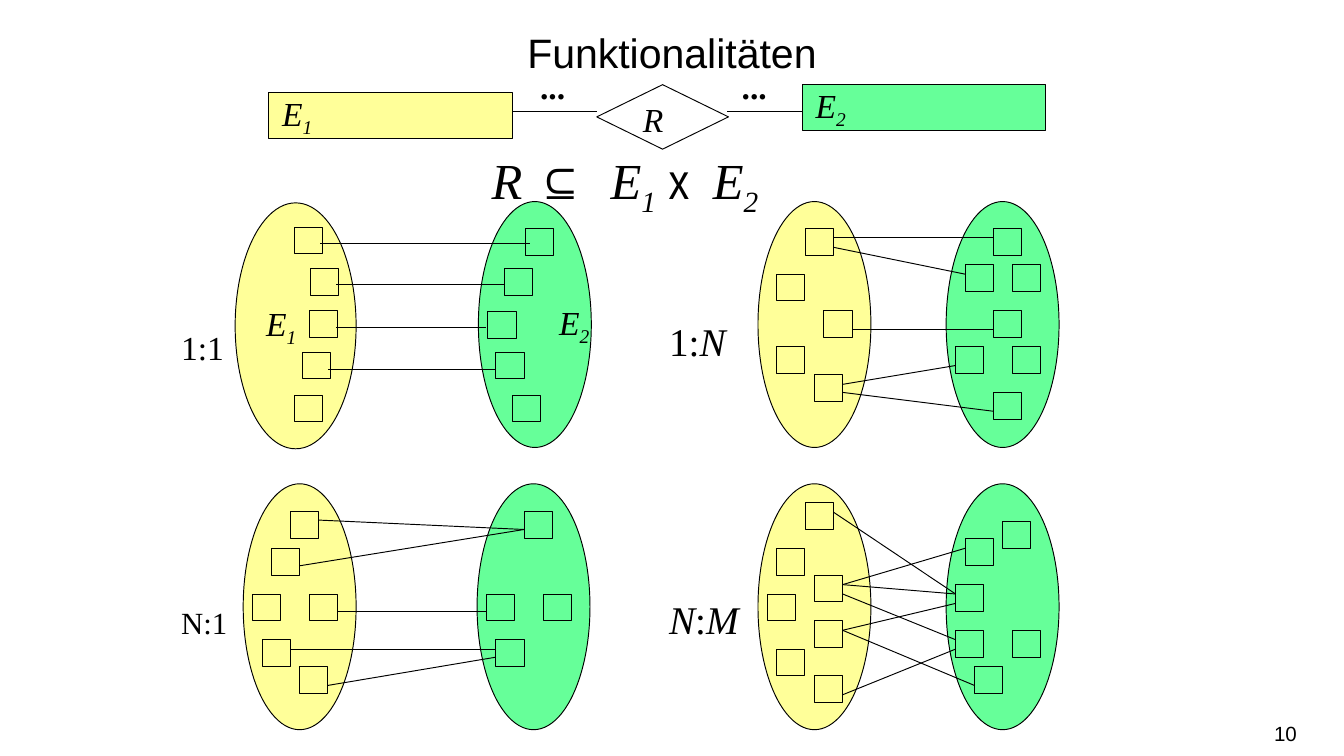
from pptx import Presentation
from pptx.util import Cm, Pt
from pptx.dml.color import RGBColor
from pptx.enum.shapes import MSO_SHAPE as Form, MSO_CONNECTOR as Link
from pptx.enum.text import PP_ALIGN as Align, MSO_ANCHOR as Anchor
from lxml import etree

BLACK = RGBColor(0x00, 0x00, 0x00)
YELLOW = RGBColor(0xFF, 0xFF, 0x99)
GREEN = RGBColor(0x66, 0xFF, 0x99)
INCH = 2.54
NS = "http://schemas.openxmlformats.org/drawingml/2006/main"
SERIF = "Times New Roman"

deck = Presentation()
deck.slide_width = Cm(25.4)
deck.slide_height = deck.slide_width * 9 // 16
slide = deck.slides.add_slide(deck.slide_layouts[5])
shapes = slide.shapes


def draw(form, at, fill=None):
    shape = shapes.add_shape(form, *[Cm(v * INCH) for v in at])
    shape.shadow.inherit = False
    if fill is None:
        shape.fill.background()
    else:
        shape.fill.solid()
        shape.fill.fore_color.rgb = fill
    shape.line.color.rgb = BLACK
    shape.line.width = Pt(0.5)
    return shape


def write(shape, size, runs, wrap=True, anchor=Anchor.TOP, align=Align.LEFT):
    frame = shape.text_frame
    frame.word_wrap = wrap
    frame.vertical_anchor = anchor
    par = frame.paragraphs[0]
    par.alignment = align
    for text, style in runs:
        run = par.add_run()
        run.text = text
        look = {"size": Pt(size), "name": SERIF, "bold": False, "italic": False}
        look.update({k: v for k, v in style.items() if k not in ("baseline", "spc")})
        for key, value in look.items():
            setattr(run.font, key, value)
        run.font.color.rgb = BLACK
        for key in ("baseline", "spc"):
            if key in style:
                run.font._rPr.set(key, style[key])
    return par


PLAIN = {}
BOLD = {"bold": True}
ITAL = {"italic": True}
SUB = {"italic": True, "baseline": "-25000"}
SANS = {"name": "Arial"}
SLIM = {"name": "Arial Narrow"}
WIDE = {"italic": True, "spc": "675"}
SET1 = [("E", ITAL), ("1", SUB)]
SET2 = [("E", ITAL), ("2", SUB)]

title = shapes.title
title.left, title.top, title.width, title.height = [
    Cm(v * INCH) for v in (1.25, 0.06, 7.5, 0.44)]
par = write(title, 22, [("Funktionalitäten", SANS)], align=Align.CENTER)
par.line_spacing = 1.25

for form, at, fill, runs in [
    (Form.RECTANGLE, (2, 0.69, 1.81, 0.34), YELLOW, SET1),
    (Form.RECTANGLE, (5.97, 0.63, 1.81, 0.34), GREEN, SET2),
    (Form.DIAMOND, (4.44, 0.63, 0.98, 0.48), None, [("R", ITAL)]),
]:
    par = write(draw(form, at, fill), 18, runs, False, Anchor.MIDDLE)
    if form == Form.DIAMOND:
        par.line_spacing = 1.1

labels = [
    ((3.92, 0.44, 0.5, 0.4), 18, [("...", BOLD)]),
    ((5.42, 0.44, 0.5, 0.4), 18, [("...", BOLD)]),
    ((3.56, 1.06, 2.81, 0.56), 27, [
        ("R ⊆", ITAL), (" ", WIDE), ("E", ITAL), ("1", SUB), (" ", ITAL),
        ("x", SLIM), (" ", {"name": "Arial Narrow", "spc": "650"}),
        ("E", ITAL), ("2", SUB)]),
    ((1.25, 2.38, 0.56, 0.4), 18, [("1:1", PLAIN)]),
    ((4.88, 2.31, 0.81, 0.45), 21, [("1:", PLAIN), ("N", ITAL)]),
    ((1.25, 4.44, 0.56, 0.38), 16.5, [("N:1", PLAIN)]),
    ((4.88, 4.38, 0.81, 0.45), 21, [("N", ITAL), (":", PLAIN), ("M", ITAL)]),
]
for at, size, runs in labels:
    write(shapes.add_textbox(*[Cm(v * INCH) for v in at]), size, runs)

ovals = [
    ((1.75, 1.51, 0.9, 1.83), YELLOW, None, SET1, 0,
     [(2.19, 1.69), (2.31, 2), (2.3, 2.31), (2.25, 2.62), (2.19, 2.94)]),
    ((3.56, 1.5, 0.84, 1.83), GREEN, None, SET2, 0.38,
     [(3.91, 1.7), (3.75, 2), (3.63, 2.32), (3.69, 2.62), (3.81, 2.94)]),
    ((5.64, 1.5, 0.84, 1.83), YELLOW, None, [], 0,
     [(5.99, 1.7), (5.78, 2.04), (6.13, 2.31), (5.78, 2.58), (6.06, 2.79)]),
    ((7.04, 1.5, 0.84, 1.83), GREEN, None, [], 0,
     [(7.39, 1.7), (7.18, 1.97), (7.53, 1.97), (7.39, 2.31),
      (7.11, 2.58), (7.53, 2.58), (7.39, 2.92)]),
    ((1.81, 3.6, 0.84, 1.83), YELLOW, YELLOW, [], 0,
     [(2.16, 3.81), (2.02, 4.08), (1.88, 4.42), (2.3, 4.42),
      (1.95, 4.76), (2.23, 4.96)]),
    ((3.55, 3.6, 0.84, 1.83), GREEN, None, [], 0,
     [(3.9, 3.81), (3.62, 4.42), (4.04, 4.42), (3.69, 4.76)]),
    ((5.64, 3.6, 0.84, 1.83), YELLOW, None, [], 0,
     [(5.99, 3.74), (5.78, 4.08), (6.06, 4.28), (5.71, 4.42),
      (6.06, 4.62), (5.78, 4.83), (6.06, 5.03)]),
    ((7.04, 3.6, 0.84, 1.83), GREEN, None, [], 0,
     [(7.46, 3.88), (7.18, 4.01), (7.11, 4.35), (7.11, 4.69),
      (7.53, 4.69), (7.25, 4.96)]),
]
for at, fill, inner, runs, indent, spots in ovals:
    oval = draw(Form.OVAL, at, fill)
    if runs:
        par = write(oval, 18, runs, False, Anchor.MIDDLE)
        par._p.get_or_add_pPr().set("marL", str(Cm(indent * INCH)))
    for x, y in spots:
        draw(Form.RECTANGLE, (x, y, 0.21, 0.2), inner)

lines = [
    (5.41, 0.83, 5.97, 0.83), (4.44, 0.83, 3.81, 0.83),
    (3.94, 1.81, 2.38, 1.81), (2.5, 2.12, 3.75, 2.12),
    (2.5, 2.44, 3.62, 2.44), (2.44, 2.75, 3.69, 2.75),
    (6.2, 1.77, 7.39, 1.77), (6.2, 1.84, 7.18, 2.04),
    (6.34, 2.45, 7.39, 2.45), (6.27, 2.86, 7.11, 2.72),
    (6.27, 2.92, 7.39, 3.06),
    (2.37, 3.87, 3.9, 3.94), (3.9, 3.94, 2.23, 4.21),
    (2.51, 4.55, 3.62, 4.55), (2.16, 4.83, 3.69, 4.83),
    (2.44, 5.1, 3.69, 4.89),
    (6.2, 3.81, 7.11, 4.42), (7.18, 4.08, 6.27, 4.35),
    (6.27, 4.35, 7.11, 4.42), (6.27, 4.42, 7.11, 4.76),
    (7.11, 4.49, 6.27, 4.69), (6.27, 4.69, 7.25, 5.1),
    (6.27, 5.17, 7.11, 4.83),
]
for ends in lines:
    line = shapes.add_connector(Link.STRAIGHT, *[Cm(v * INCH) for v in ends])
    line.line.color.rgb = BLACK
    line.line.width = Pt(0.5)
    etree.SubElement(line._element.spPr, "{%s}effectLst" % NS)

page = shapes.add_textbox(*[Cm(v * INCH) for v in (7.41, 5.31, 2.24, 0.3)])
write(page, 11, [("10", SANS)], anchor=Anchor.MIDDLE, align=Align.RIGHT)
page.text_frame.margin_left = page.text_frame.margin_right = Cm(0)

deck.save("out.pptx")
